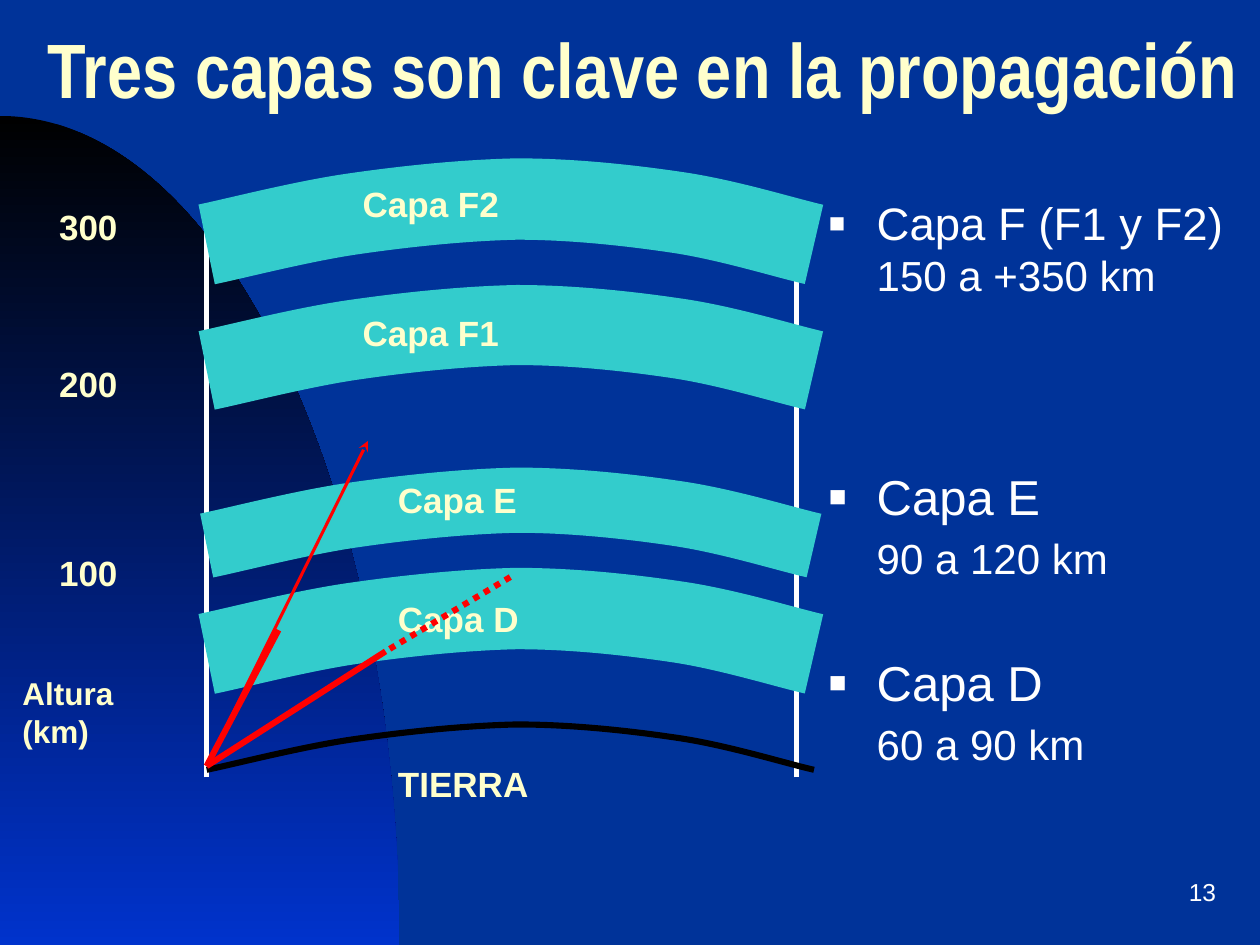
"""Build a slide on the ionospheric layers that matter for radio propagation."""
from dataclasses import dataclass
from typing import Optional

from lxml.etree import SubElement
from pptx import Presentation
from pptx.dml.color import RGBColor
from pptx.enum.dml import MSO_LINE_DASH_STYLE as Dash
from pptx.enum.shapes import MSO_CONNECTOR as Connector
from pptx.enum.text import MSO_ANCHOR as Anchor, MSO_AUTO_SIZE as AutoSize, PP_ALIGN as Align
from pptx.oxml.ns import qn
from pptx.util import Inches, Pt

NAVY, BLUE, BLACK, WHITE = "003399", "0033CC", "000000", "FFFFFF"
CREAM, TEAL, RED = "FFFFCC", "33CCCC", "FF0000"
Point = tuple[float, float]

ARC_LEFT = 1.64
ARC = [
    (0, 0.36), (0.2, 0.32), (0.74, 0.18), (1.15, 0.12),
    (1.56, 0.06), (2.03, 0.01), (2.46, 0),
    (2.9, 0), (3.36, 0.05), (3.76, 0.11),
    (4.15, 0.17), (4.6, 0.31), (4.82, 0.36),
]
HILL = [(0, 0.92), (1.75, 0.92), (3.17, 3.87), (3.17, 7.5), (0, 7.5)]
STATION = (ARC_LEFT, 6.08)


@dataclass
class Band:
    top: float
    width: float
    color: str = TEAL


@dataclass
class Label:
    text: str
    left: float
    top: float
    width: float
    height: float = 0.43
    size: float = 20


@dataclass
class Ray:
    start: Point
    end: Point
    width: float = 3.5
    color: str = RED
    dash: Optional[Dash] = None
    arrow: bool = False


@dataclass
class Entry:
    runs: list[tuple[str, float]]
    space_before: float
    bullet: bool = True


BANDS = [Band(5.75, 3.5, BLACK), Band(4.83, 46.5), Band(3.97, 37.25),
         Band(2.58, 45.75), Band(1.58, 46.5)]
AXES = [Ray((x, 6.17), (x, 1.75), 2.75, WHITE) for x in (6.32, ARC_LEFT)]
LABELS = [
    Label("TIERRA", 3.06, 6, 5.25, 0.77),
    Label("Capa D", 3.06, 4.69, 2.18),
    Label("100", 0.37, 4.33, 1.28),
    Label("200", 0.37, 2.83, 1.28),
    Label("300", 0.37, 1.58, 1.28),
    Label("Altura\n(km)", 0.08, 5.3, 2.13, 0.7, 18),
    Label("Capa E", 3.06, 3.75, 2.13),
    Label("Capa F1", 2.78, 2.42, 2.84),
    Label("Capa F2", 2.78, 1.4, 2.84),
]
RAYS = [
    Ray(STATION, (2.92, 3.5), 1.75, arrow=True),
    Ray(STATION, (3.06, 5.17)),
    Ray((4.05, 4.58), (3.06, 5.17), dash=Dash.ROUND_DOT),
    Ray(STATION, (2.21, 5)),
]
ENTRIES = [
    Entry([("Capa F (F1 y F2)", 26), (" 150 a +350 km", 24)], 0),
    Entry([("Capa E", 28)], 95),
    Entry([("90 a 120 km", 24)], 4, False),
    Entry([("Capa D", 28)], 40),
    Entry([("60 a 90 km", 24)], 4, False),
]


def rgb(color: str) -> RGBColor:
    return RGBColor.from_string(color)


def format_font(font, size: float, color: str, bold: bool = False, name: str = "Arial") -> None:
    font.name, font.size, font.bold = name, Pt(size), bold
    font.color.rgb = rgb(color)


def add_curve(slide, points: list[Point], close: bool):
    """Draw a chain of cubic Bezier curves; points left over become straight lines."""
    corners = [(Inches(x), Inches(y)) for x, y in points]
    builder = slide.shapes.build_freeform(*corners[0])
    builder.add_line_segments(corners[1:], close=close)
    shape = builder.convert_to_shape()
    shape.shadow.inherit = False
    segments = list(shape._element.iter(qn("a:lnTo")))
    for first in range(0, len(segments) - 2, 3):
        start, *others = segments[first:first + 3]
        start.tag = qn("a:cubicBezTo")
        for other in others:
            start.append(other[0])
            other.getparent().remove(other)
    return shape


def add_hill(slide) -> None:
    shape = add_curve(slide, HILL, True)
    shape.line.fill.background()
    shape.fill.gradient()
    shape.fill.gradient_angle = 270
    for stop, color, position in zip(shape.fill.gradient_stops, (BLACK, BLUE), (0, 1)):
        stop.color.rgb, stop.position = rgb(color), position


def add_band(slide, band: Band) -> None:
    shape = add_curve(slide, [(ARC_LEFT + x, band.top + y) for x, y in ARC], False)
    shape.fill.background()
    shape.line.color.rgb, shape.line.width = rgb(band.color), Pt(band.width)


def add_ray(slide, ray: Ray) -> None:
    ends = [Inches(value) for value in ray.start + ray.end]
    connector = slide.shapes.add_connector(Connector.STRAIGHT, *ends)
    line = connector.line
    line.color.rgb, line.width = rgb(ray.color), Pt(ray.width)
    if ray.dash:
        line.dash_style = ray.dash
    properties = connector._element.spPr
    if ray.arrow:
        SubElement(properties.find(qn("a:ln")), qn("a:tailEnd"), type="stealth")
    SubElement(properties, qn("a:effectLst"))


def add_text_frame(slide, left: float, top: float, width: float, height: float):
    box = slide.shapes.add_textbox(Inches(left), Inches(top), Inches(width), Inches(height))
    box.text_frame.word_wrap = True
    return box.text_frame


def add_label(slide, label: Label) -> None:
    frame = add_text_frame(slide, label.left, label.top, label.width, label.height)
    frame.text = label.text
    for paragraph in frame.paragraphs:
        format_font(paragraph.runs[0].font, label.size, CREAM, True)


def add_entries(slide) -> None:
    frame = add_text_frame(slide, 6.48, 0.99, 3.52, 5.75)
    frame.margin_top = Inches(0.56)
    for index, entry in enumerate(ENTRIES):
        paragraph = frame.add_paragraph() if index else frame.paragraphs[0]
        paragraph.space_before = Pt(entry.space_before)
        for text, size in entry.runs:
            run = paragraph.add_run()
            run.text = text
            format_font(run.font, size, WHITE)
        properties = paragraph._p.get_or_add_pPr()
        properties.set("marL", str(Inches(0.38)))
        if entry.bullet:
            properties.set("indent", str(-Inches(0.38)))
            color = SubElement(properties, qn("a:buClr"))
            SubElement(color, qn("a:srgbClr"), val=WHITE)
            SubElement(properties, qn("a:buSzPct"), val="60000")
            SubElement(properties, qn("a:buFont"), typeface="Arial")
            SubElement(properties, qn("a:buChar"), char="■")


def set_title(slide) -> None:
    title = slide.shapes.title
    title.left, title.top, title.width, title.height = map(Inches, (0.28, 0, 9.72, 1.25))
    frame = title.text_frame
    frame.text = "Tres capas son clave en la propagación"
    frame.auto_size, frame.vertical_anchor = AutoSize.NONE, Anchor.MIDDLE
    paragraph = frame.paragraphs[0]
    paragraph.alignment, paragraph.line_spacing = Align.LEFT, 0.7
    format_font(paragraph.runs[0].font, 44, CREAM, True, "Arial Narrow")


def add_slide_number(slide) -> None:
    frame = add_text_frame(slide, 7.67, 6.83, 2.08, 0.5)
    frame.text, frame.vertical_anchor = "13", Anchor.MIDDLE
    frame.paragraphs[0].alignment = Align.RIGHT
    format_font(frame.paragraphs[0].runs[0].font, 14, WHITE)


def main() -> None:
    presentation = Presentation()
    presentation.slide_width, presentation.slide_height = Inches(10), Inches(7.5)
    slide = presentation.slides.add_slide(presentation.slide_layouts[5])
    slide.background.fill.solid()
    slide.background.fill.fore_color.rgb = rgb(NAVY)
    add_hill(slide)
    set_title(slide)
    add_slide_number(slide)
    add_entries(slide)
    for draw, items in ((add_ray, AXES), (add_band, BANDS), (add_label, LABELS), (add_ray, RAYS)):
        for item in items:
            draw(slide, item)
    presentation.save("out.pptx")


if __name__ == "__main__":
    main()
